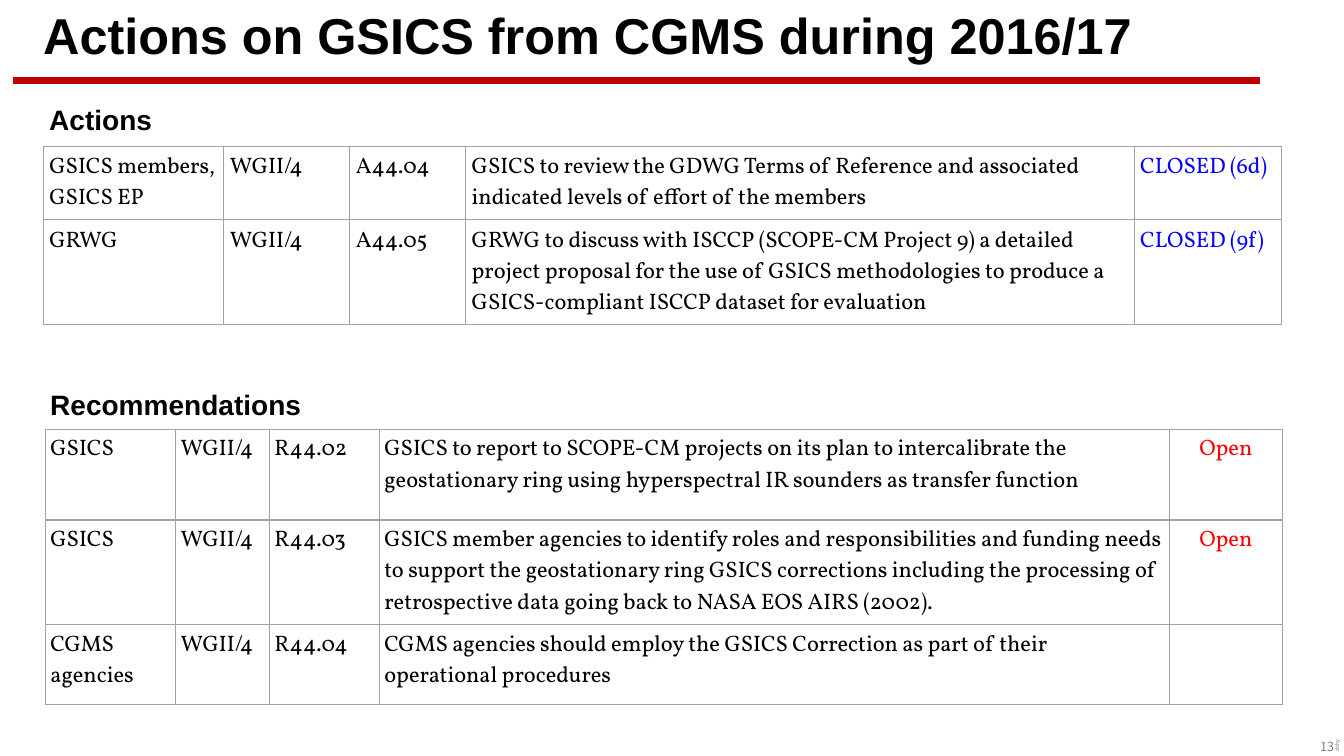
from lxml.etree import SubElement
from pptx import Presentation
from pptx.dml.color import RGBColor
from pptx.enum.shapes import MSO_CONNECTOR
from pptx.enum.text import MSO_ANCHOR, PP_ALIGN
from pptx.oxml.ns import qn
from pptx.util import Inches, Pt

WIDTH, HEIGHT = 13.33, 7.5
BLACK, RED, BLUE, GREY, RULE, BORDER = (
    "000000", "FF0000", "0000FF", "808080", "C00000", "A3A3A3")

TITLE = {"name": "Arial", "size": Pt(36), "bold": True}
HEADING = {"name": "Arial", "size": Pt(20), "bold": True}
BODY = {"name": "Vollkorn", "size": Pt(16), "bold": False}
FOOTER = {"name": "Noto Sans CJK KR", "size": Pt(9)}
SIDE_MARK = {"name": "Noto Sans CJK KR", "size": Pt(3.8)}

# Sections: heading box, table box, column and row shares, cell inset, rows
SECTIONS = [
    {
        "heading": "Actions",
        "heading_box": (0.39, 0.97, 4.37, 0.44),
        "table_box": (0.43, 1.45, 12.28, 1.77),
        "columns": (1.79, 1.25, 1.15, 6.63, 1.46),
        "rows": (0.73, 1.04),
        "inset": 0.06,
        "status": (BLUE, PP_ALIGN.LEFT),
        "cells": [
            ("GSICS members, GSICS EP", "WGII/4", "A44.04",
             "GSICS to review the GDWG Terms of Reference and associated "
             "indicated levels of effort of the members", "CLOSED (6d)"),
            ("GRWG", "WGII/4", "A44.05",
             "GRWG to discuss with ISCCP (SCOPE-CM Project 9) a detailed "
             "project proposal for the use of GSICS methodologies to produce "
             "a GSICS-compliant ISCCP dataset for evaluation", "CLOSED (9f)"),
        ],
    },
    {
        "heading": "Recommendations",
        "heading_box": (0.4, 3.8, 4.37, 0.44),
        "table_box": (0.45, 4.26, 12.27, 2.73),
        "columns": (1.29, 0.93, 1.09, 7.83, 1.12),
        "rows": (0.9, 1.04, 0.79),
        "inset": 0.05,
        "status": (RED, PP_ALIGN.CENTER),
        "cells": [
            ("GSICS", "WGII/4", "R44.02",
             "GSICS to report to SCOPE-CM projects on its plan to "
             "intercalibrate the geostationary ring using hyperspectral IR "
             "sounders as transfer function", "Open"),
            ("GSICS", "WGII/4", "R44.03",
             "GSICS member agencies to identify roles and responsibilities "
             "and funding needs to support the geostationary ring GSICS "
             "corrections including the processing of retrospective data "
             "going back to NASA EOS AIRS (2002).", "Open"),
            ("CGMS agencies", "WGII/4", "R44.04",
             "CGMS agencies should employ the GSICS Correction as part of "
             "their operational procedures", ""),
        ],
    },
]


def color(value):
    return RGBColor.from_string(value)


def write(frame, text, style, ink=BLACK, align=PP_ALIGN.LEFT):
    frame.word_wrap = True
    para = frame.paragraphs[0]
    para.alignment = align
    if text:
        span = para.add_run()
        span.text = text
        font = span.font
    else:
        font = para.font
    for name, value in style.items():
        setattr(font, name, value)
    font.color.rgb = color(ink)
    return para


def add_text(page, box, text, style, ink=BLACK, align=PP_ALIGN.LEFT):
    shape = page.shapes.add_textbox(*map(Inches, box))
    write(shape.text_frame, text, style, ink, align)
    return shape


def add_header(page, box):
    """Title with the red rule below it."""
    title = add_text(page, box, "Actions on GSICS from CGMS during 2016/17", TITLE)
    title.text_frame.vertical_anchor = MSO_ANCHOR.MIDDLE
    title.text_frame.paragraphs[0].line_spacing = 0.9

    left, top, width, height = box
    rule_y = Inches(top + height + 0.12)
    rule = page.shapes.add_connector(
        MSO_CONNECTOR.STRAIGHT, Inches(left - 0.2), rule_y,
        Inches(left + width + 0.67), rule_y)
    rule.line.color.rgb = color(RULE)
    rule.line.width = Pt(4.5)
    SubElement(rule._element.spPr, qn("a:effectLst"))


def style_cell(cell, inset):
    for side in ("left", "right", "top", "bottom"):
        setattr(cell, f"margin_{side}", Inches(inset))
    properties = cell._tc.get_or_add_tcPr()
    for edge in ("a:lnL", "a:lnR", "a:lnT", "a:lnB"):
        line = SubElement(properties, qn(edge), w=str(Pt(1)))
        SubElement(SubElement(line, qn("a:solidFill")), qn("a:srgbClr"), val=BORDER)
    cell.fill.background()


def add_section(page, section):
    """Heading and its table, divided by column and row shares."""
    add_text(page, section["heading_box"], section["heading"], HEADING)

    box, columns, rows = (section[key] for key in ("table_box", "columns", "rows"))
    table = page.shapes.add_table(
        len(rows), len(columns), *map(Inches, box)).table
    table.first_row = table.horz_banding = False
    for column, share in zip(table.columns, columns):
        column.width = Inches(box[2] * share / sum(columns))
    for row, share in zip(table.rows, rows):
        row.height = Inches(box[3] * share / sum(rows))

    for row, texts in zip(table.rows, section["cells"]):
        for index, (cell, text) in enumerate(zip(row.cells, texts)):
            is_status = index == len(columns) - 1
            ink, align = section["status"] if is_status else (BLACK, PP_ALIGN.LEFT)
            style_cell(cell, section["inset"])
            write(cell.text_frame, text, BODY, ink, align)


def add_footer(page, box):
    """Page number with the small upright mark beside it."""
    add_text(page, box, "13", FOOTER, GREY, PP_ALIGN.RIGHT)
    left, top, width, height = box
    mark = add_text(page, (left + 0.5, top - 0.43, width, 0.16),
                    "dohy", SIDE_MARK, GREY)
    mark.rotation = 270
    frame = mark.text_frame
    frame.vertical_anchor = MSO_ANCHOR.MIDDLE
    frame.margin_top = frame.margin_bottom = 0
    frame.margin_left = Inches(0.04)


def main():
    deck = Presentation()
    deck.slide_width, deck.slide_height = Inches(WIDTH), Inches(HEIGHT)
    page = deck.slides.add_slide(deck.slide_layouts[6])
    add_header(page, (0.33, 0.08, 11.5, 0.6))
    for section in SECTIONS:
        add_section(page, section)
    add_footer(page, (WIDTH - 1.14, HEIGHT - 0.22, 1.14, 0.22))
    deck.save("out.pptx")


if __name__ == "__main__":
    main()
